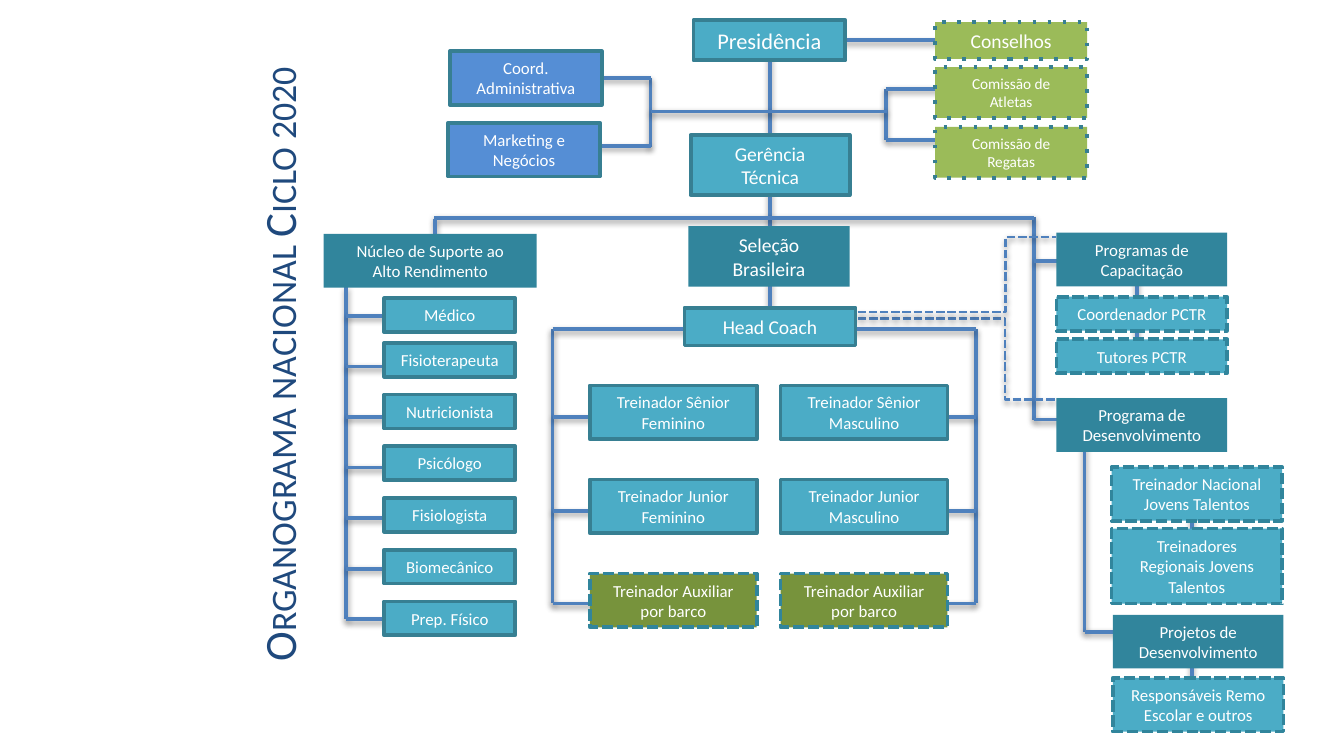
from lxml.etree import SubElement
from pptx import Presentation
from pptx.dml.color import RGBColor
from pptx.enum.shapes import MSO_CONNECTOR, MSO_SHAPE
from pptx.enum.text import MSO_ANCHOR, PP_ALIGN
from pptx.oxml.ns import qn
from pptx.util import Pt

THEME = {
    "font": "Calibri", "title": "1F497D", "text": "FFFFFF", "line": "4F81BD",
    "title_size": 24, "large": 12, "medium": 10.5, "body": 9, "small": 8.2,
    "line_width": 2, "dash_width": 1.5, "inset": 8, "wide_inset": 10,
}
# Box styles: fill, border colour, border dash
STYLES = {
    "role": ("4BACC6", "377F92", None),
    "support": ("558ED5", "377F92", None),
    "council": ("9BBB59", "377F92", "dot"),
    "unit": ("31859C", None, None),
    "partner": ("4BACC6", "31859C", "sysDash"),
    "assistant": ("77933C", "31859C", "sysDash"),
}

# Content
TITLE = "Organograma nacional Ciclo 2020"
STAFF = ["Médico", "Fisioterapeuta", "Nutricionista", "Psicólogo",
         "Fisiologista", "Biomecânico", "Prep. Físico"]
COACHES = [
    ("Treinador Sênior Feminino", "Treinador Sênior Masculino", "role"),
    ("Treinador Junior Feminino", "Treinador Junior Masculino", "role"),
    ("Treinador Auxiliar por barco", "Treinador Auxiliar\npor barco", "assistant"),
]
# Text, style, type size, left, top, width, height
BOXES = [
    ("Presidência", "role", "large", 371.5, 10.8, 81.4, 21.6),
    ("Gerência Técnica", "role", "medium", 370, 72.2, 85.2, 32.4),
    ("Seleção Brasileira", "unit", "medium", 368.8, 121.2, 86.4, 32.4),
    ("Head Coach", "role", "medium", 366.7, 164.9, 91.6, 20.2),
    ("Coord. Administrativa", "support", "body", 241, 27.4, 81.4, 28.8),
    ("Marketing e Negócios", "support", "body", 240, 65.8, 81.4, 28.8),
    ("Conselhos", "council", "medium", 501, 11.8, 81.4, 19.8),
    ("Comissão de Atletas", "council", "small", 501, 36, 81.4, 27.2),
    ("Comissão de Regatas", "council", "small", 501, 68, 81.4, 27.2),
    ("Núcleo de Suporte ao\nAlto Rendimento", "unit", "body", 173.3, 125.3, 114.2, 28.8),
    ("Programas de Capacitação", "unit", "body", 566, 124.6, 91.4, 28.8),
    ("Coordenador PCTR", "partner", "body", 566, 159, 91.4, 18.2),
    ("Tutores PCTR", "partner", "body", 566, 181.8, 91.4, 18.2),
    ("Programa de Desenvolvimento", "unit", "body", 566, 213.3, 91.4, 28.8),
    ("Treinador Nacional Jovens Talentos", "partner", "body", 595.5, 250.2, 91.4, 28.8),
    ("Treinadores Regionais Jovens Talentos", "partner", "body", 595.5, 283.2, 91.4, 40.2),
    ("Projetos de Desenvolvimento", "unit", "body", 596.2, 329.4, 91.4, 28.8),
    ("Responsáveis Remo Escolar e outros", "partner", "body", 596.2, 363.2, 91.4, 28.8),
]
COACH_LINES = [223.4, 273.7, 323.3]
# Trunk x, trunk top, trunk bottom, branch end x, branch heights
BRACKETS = [
    (185.5, 153.5, 331.9, 223, [169.2 + 27.1 * i for i in range(len(STAFF))]),
    (296, 176.4, 323.3, 323.3, COACH_LINES),
    (522.7, 176.4, 323.3, 495.5, COACH_LINES),
    (348.5, 41.8, 79, 295.5, [41.8, 78.3]),
    (474.7, 47.5, 75, 518.4, [47.5, 75]),
    (554, 116.2, 224.8, 574.6, [139.8, 224.8]),
    (581, 232.5, 338.4, 599.8, [338.4]),
]
# Single lines: start x, start y, end x, end y
LINES = [
    (412.6, 21.6, 412.6, 170.6), (449.3, 21.6, 513.4, 21.6),
    (348.5, 59.8, 475, 59.8), (232.6, 116.6, 553.7, 116.6),
    (233.2, 117.4, 233.2, 149.8), (296, 176.4, 522.7, 176.4),
    (609, 137.5, 609, 193.7), (638.6, 266.4, 638.6, 298),
    (638.6, 339.8, 638.6, 371.5),
]
# Dashed elbows: ends, then position of the bend in 1/100000
ELBOWS = [((453.6, 170.8, 575.3, 214.2), 69700),
          ((459.4, 167.2, 565.9, 127), 74600)]


def add_dash(shape, dash):
    SubElement(shape.line._get_or_add_ln(), qn("a:prstDash"), val=dash)


def add_shadow(connector):
    effects = SubElement(connector._element.spPr, qn("a:effectLst"))
    shadow = SubElement(effects, qn("a:outerShdw"), blurRad="40000", dist="20000",
                        dir="5400000", rotWithShape="0")
    color = SubElement(shadow, qn("a:srgbClr"), val="000000")
    SubElement(color, qn("a:alpha"), val="38000")


def add_line(slide, ends, bend=None):
    kind = MSO_CONNECTOR.STRAIGHT if bend is None else MSO_CONNECTOR.ELBOW
    connector = slide.shapes.add_connector(kind, *map(Pt, ends))
    connector.line.color.rgb = RGBColor.from_string(THEME["line"])
    connector.line.width = Pt(THEME["line_width" if bend is None else "dash_width"])
    if bend is not None:
        guides = connector._element.spPr.find(qn("a:prstGeom")).get_or_add_avLst()
        SubElement(guides, qn("a:gd"), name="adj1", fmla=f"val {bend}")
        add_dash(connector, "sysDash")
    add_shadow(connector)


def format_font(font, size, color):
    for name, value in {"name": THEME["font"], "size": Pt(THEME[size])}.items():
        setattr(font, name, value)
    font.color.rgb = RGBColor.from_string(THEME[color])


def add_box(slide, text, style, size, left, top, width, height):
    shape = slide.shapes.add_shape(MSO_SHAPE.RECTANGLE, *map(Pt, (left, top, width, height)))
    shape.shadow.inherit = False
    fill, border, dash = STYLES[style]
    shape.fill.solid()
    shape.fill.fore_color.rgb = RGBColor.from_string(fill)
    if border:
        shape.line.color.rgb = RGBColor.from_string(border)
        shape.line.width = Pt(THEME["line_width"])
    else:
        shape.line.fill.background()
    if dash:
        add_dash(shape, dash)
    frame = shape.text_frame
    inset = Pt(THEME["wide_inset" if size == "small" else "inset"])
    settings = {"text": text, "word_wrap": True, "vertical_anchor": MSO_ANCHOR.MIDDLE,
                "margin_left": inset, "margin_right": inset}
    for name, value in settings.items():
        setattr(frame, name, value)
    for paragraph in frame.paragraphs:
        paragraph.alignment = PP_ALIGN.CENTER
        format_font(paragraph.runs[0].font, size, "text")


def add_title(slide):
    title = slide.shapes.title
    settings = {"left": Pt(-70), "top": Pt(124.6), "width": Pt(438),
                "height": Pt(36), "rotation": 270}
    for name, value in settings.items():
        setattr(title, name, value)
    frame = title.text_frame
    frame.text = TITLE
    frame.vertical_anchor = MSO_ANCHOR.TOP
    paragraph = frame.paragraphs[0]
    paragraph.alignment = PP_ALIGN.LEFT
    font = paragraph.runs[0].font
    format_font(font, "title_size", "title")
    paragraph.runs[0]._r.get_or_add_rPr().set("cap", "small")


def main():
    presentation = Presentation()
    presentation.slide_width, presentation.slide_height = Pt(720), Pt(405)
    slide = presentation.slides.add_slide(presentation.slide_layouts[5])
    add_title(slide)

    # Connectors, behind the boxes
    for trunk, top, bottom, end, heights in BRACKETS:
        add_line(slide, (trunk, top, trunk, bottom))
        for height in heights:
            add_line(slide, (trunk, height, end, height))
    for ends in LINES:
        add_line(slide, ends)
    for ends, bend in ELBOWS:
        add_line(slide, ends, bend)

    # Single boxes
    for box in BOXES:
        add_box(slide, *box)

    # Support staff column; the first box sits a little lower than the even step
    for index, text in enumerate(STAFF):
        top = 156 + 27.7 * index if index else 159.8
        add_box(slide, text, "role", "body", 205.8, top, 70.2, 18.2)

    # Coach grid
    for row, (women, men, style) in enumerate(COACHES):
        for column, text in enumerate((women, men)):
            add_box(slide, text, style, "body", 316 + 102.2 * column,
                    206.5 + 50.4 * row, 89.4, 28.8)

    presentation.save("out.pptx")


if __name__ == "__main__":
    main()
